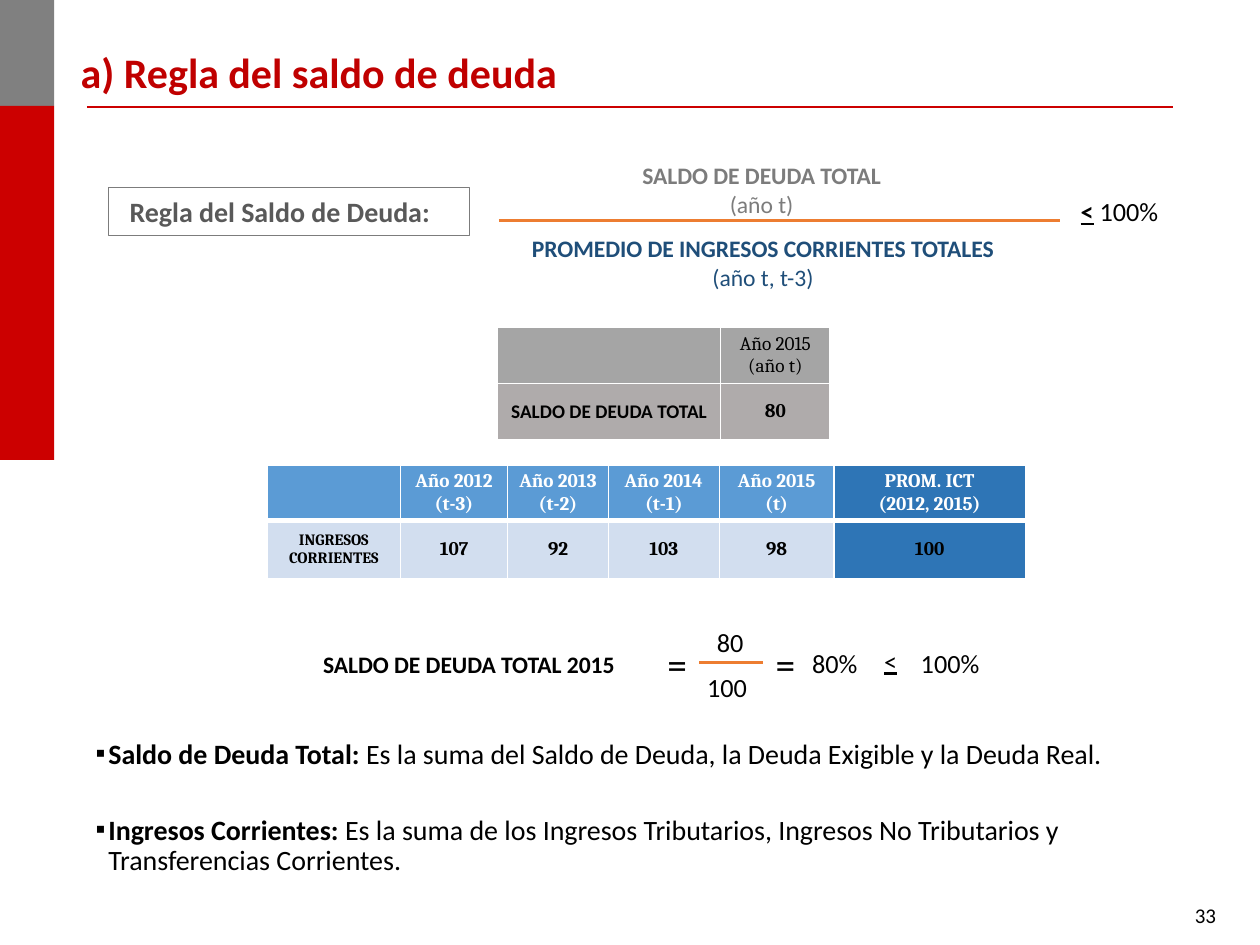
"""Build the slide that explains the debt balance rule."""
from dataclasses import dataclass
from typing import Optional

from lxml.etree import SubElement
from pptx import Presentation
from pptx.dml.color import RGBColor
from pptx.enum.shapes import MSO_CONNECTOR as Connector, MSO_SHAPE as Preset
from pptx.enum.text import MSO_ANCHOR as Anchor, MSO_AUTO_SIZE as AutoSize, PP_ALIGN as Align
from pptx.oxml.ns import qn
from pptx.util import Pt


@dataclass(frozen=True)
class Theme:
    sans: str = "Calibri"
    serif: str = "Cambria"
    black: str = "000000"
    white: str = "FFFFFF"
    red: str = "CC0000"
    title_red: str = "C00000"
    grey: str = "808080"
    soft_grey: str = "7C7C7C"
    dark_grey: str = "595959"
    navy: str = "1F4E79"
    orange: str = "ED7D31"
    debt_head: str = "A5A5A5"
    debt_row: str = "AFABAB"
    income_head: str = "5B9BD5"
    income_row: str = "D2DEEF"
    average: str = "2E75B6"
    title_size: float = 24
    equals_size: float = 22.5
    body_size: float = 16
    value_size: float = 15
    term_size: float = 13.5
    number_size: float = 12
    table_size: float = 11
    small_size: float = 9


THEME = Theme()


@dataclass(frozen=True)
class Span:
    text: str
    size: float = THEME.value_size
    color: str = THEME.black
    bold: bool = False
    underline: bool = False
    font: str = THEME.sans


@dataclass(frozen=True)
class Box:
    left: float
    top: float
    width: float
    height: float

    def lengths(self) -> list:
        return [Pt(value) for value in (self.left, self.top, self.width, self.height)]


@dataclass(frozen=True)
class Label:
    box: Box
    paras: list[list[Span]]
    align: Align = Align.CENTER


@dataclass(frozen=True)
class Rule:
    left: float
    right: float
    y: float
    color: str = THEME.orange
    weight: float = 1.5


@dataclass(frozen=True)
class Cell:
    fill: str
    lines: tuple[str, ...] = ()
    color: str = THEME.black
    bold: bool = True
    size: float = THEME.table_size
    font: str = THEME.serif


@dataclass(frozen=True)
class Grid:
    left: float
    top: float
    columns: list[float]
    rows: list[float]
    cells: list[list[Cell]]
    divider: float


def rgb(color: str) -> RGBColor:
    return RGBColor.from_string(color)


def write_para(para, spans: list[Span], align: Align) -> None:
    para.alignment = align
    for span in spans:
        run = para.add_run()
        run.text = span.text
        run.font.name = span.font
        run.font.size = Pt(span.size)
        run.font.bold = span.bold
        run.font.underline = span.underline
        run.font.color.rgb = rgb(span.color)


def write_frame(frame, paras: list[list[Span]], align: Align) -> None:
    frame.word_wrap = True
    for index, spans in enumerate(paras):
        para = frame.add_paragraph() if index else frame.paragraphs[0]
        write_para(para, spans, align)


def place(shape, box: Box) -> None:
    shape.left, shape.top, shape.width, shape.height = box.lengths()


def draw_label(page, label: Label) -> None:
    shape = page.shapes.add_textbox(*label.box.lengths())
    write_frame(shape.text_frame, label.paras, label.align)


def draw_rule(page, rule: Rule) -> None:
    line = page.shapes.add_connector(
        Connector.STRAIGHT, Pt(rule.left), Pt(rule.y), Pt(rule.right), Pt(rule.y))
    line.line.color.rgb = rgb(rule.color)
    line.line.width = Pt(rule.weight)
    SubElement(line._element.spPr, qn("a:effectLst"))


def draw_rectangle(page, box: Box, fill: Optional[str] = None, outline: Optional[str] = None):
    shape = page.shapes.add_shape(Preset.RECTANGLE, *box.lengths())
    shape.shadow.inherit = False
    if fill:
        shape.fill.solid()
        shape.fill.fore_color.rgb = rgb(fill)
    else:
        shape.fill.background()
    if outline:
        shape.line.color.rgb = rgb(outline)
        shape.line.width = Pt(0.75)
    else:
        shape.line.fill.background()
    return shape


def draw_border(cell, side: str, weight: float) -> None:
    edge = SubElement(cell._tc.get_or_add_tcPr(), qn(f"a:ln{side}"), w=str(Pt(weight)))
    SubElement(SubElement(edge, qn("a:solidFill")), qn("a:srgbClr"), val=THEME.white)


def draw_grid(page, grid: Grid) -> None:
    box = Box(grid.left, grid.top, sum(grid.columns), sum(grid.rows))
    table = page.shapes.add_table(len(grid.rows), len(grid.columns), *box.lengths()).table
    table.first_row = table.horz_banding = False
    for column, width in zip(table.columns, grid.columns):
        column.width = Pt(width)
    for row_index, (row, height) in enumerate(zip(table.rows, grid.rows)):
        row.height = Pt(height)
        for cell, data in zip(row.cells, grid.cells[row_index]):
            for side in "LRTB":
                inner = side == ("T" if row_index else "B")
                draw_border(cell, side, grid.divider if inner else 1)
            cell.fill.solid()
            cell.fill.fore_color.rgb = rgb(data.fill)
            cell.vertical_anchor = Anchor.MIDDLE
            cell.margin_left = cell.margin_right = Pt(5)
            cell.margin_top = cell.margin_bottom = Pt(3)
            paras = [[Span(line, data.size, data.color, data.bold, font=data.font)]
                     for line in data.lines]
            write_frame(cell.text_frame, paras, Align.CENTER)


def fill_title(page, text: str) -> None:
    title = page.shapes.title
    place(title, Box(38.9, 23, 637.9, 36))
    write_frame(title.text_frame, [[Span(text, THEME.title_size, THEME.title_red, True)]], Align.LEFT)
    title.text_frame.vertical_anchor = Anchor.MIDDLE
    title.text_frame.auto_size = AutoSize.NONE


def fill_definitions(page, definitions: list[tuple[str, str]]) -> None:
    body = page.placeholders[1]
    place(body, Box(54.7, 419.8, 636.5, 84.2))
    frame = body.text_frame
    frame.margin_left = frame.margin_right = 0
    frame.margin_top = frame.margin_bottom = Pt(3)
    frame.auto_size = AutoSize.NONE
    write_frame(frame, [[Span(term, THEME.body_size, bold=True), Span(meaning, THEME.body_size)]
                        for term, meaning in definitions], Align.LEFT)
    for index, para in enumerate(frame.paragraphs):
        para.line_spacing = 0.9
        para.space_before = Pt(24 if index else 2.2)
        para.space_after = Pt(2.2)
        props = para._p.get_or_add_pPr()
        props.set("marL", str(Pt(7.2)))
        props.set("indent", str(Pt(-7.2)))
        SubElement(props, qn("a:buChar"), char="▪")


def draw_rule_name(page, text: str) -> None:
    frame = draw_rectangle(page, Box(61.9, 107.3, 206.6, 27.4), outline=THEME.soft_grey).text_frame
    frame.margin_left, frame.margin_right = Pt(12.2), 0
    frame.vertical_anchor = Anchor.MIDDLE
    write_frame(frame, [[Span(text, THEME.body_size, THEME.dark_grey, True)]], Align.LEFT)


def term(text: str, detail: str, color: str) -> list[list[Span]]:
    return [[Span(text, THEME.term_size, color, True)], [Span(detail, THEME.term_size, color)]]


def main() -> None:
    deck = Presentation()
    deck.slide_width, deck.slide_height = Pt(720), Pt(540)
    page = deck.slides.add_slide(deck.slide_layouts[1])
    draw_rectangle(page, Box(0, 0, 31, 60.5), THEME.grey)
    draw_rectangle(page, Box(0, 60.5, 31, 202.3), THEME.red)
    fill_title(page, "a) Regla del saldo de deuda")
    for rule in (Rule(49.7, 670.3, 61.2, THEME.red, 1), Rule(285.1, 605.5, 126),
                 Rule(399.6, 436.3, 378.7)):
        draw_rule(page, rule)
    draw_rule_name(page, "Regla del Saldo de Deuda:")

    debt = [[Cell(THEME.debt_head), Cell(THEME.debt_head, ("Año 2015", "(año t)"), bold=False)],
            [Cell(THEME.debt_row, ("SALDO DE DEUDA TOTAL",), font=THEME.sans),
             Cell(THEME.debt_row, ("80",))]]
    draw_grid(page, Grid(284.4, 187.2, [127.4, 62.6], [32, 32], debt, 1))

    years = [("Año 2012", "(t-3)"), ("Año 2013", "(t-2)"), ("Año 2014", "(t-1)"), ("Año 2015", "(t)")]
    income = [[Cell(THEME.income_head),
               *(Cell(THEME.income_head, year, THEME.white) for year in years),
               Cell(THEME.average, ("PROM. ICT", "(2012, 2015)"), THEME.white)],
              [Cell(THEME.income_row, ("INGRESOS", "CORRIENTES"), size=THEME.small_size),
               *(Cell(THEME.income_row, (value,)) for value in ("107", "92", "103", "98")),
               Cell(THEME.average, ("100",))]]
    draw_grid(page, Grid(152.6, 265.7, [76.3, 61.2, 57.6, 63.4, 65.5, 109.4], [31.7, 33.1], income, 3))

    equals = [[Span("=", THEME.equals_size)]]
    for label in (
        Label(Box(293, 88.6, 284.4, 40.3), term("SALDO DE DEUDA TOTAL", "(año t)", THEME.soft_grey)),
        Label(Box(262.1, 130.3, 347.8, 40.3),
              term("PROMEDIO DE INGRESOS CORRIENTES TOTALES", "(año t, t-3)", THEME.navy)),
        Label(Box(602.6, 108, 74.2, 43.9), [[Span("<", bold=True, underline=True), Span(" 100%")]]),
        Label(Box(125.7, 367.9, 284.4, 23.8),
              [[Span("SALDO DE DEUDA TOTAL 2015", THEME.term_size, bold=True)]]),
        Label(Box(370.1, 362, 33.8, 34.6), equals),
        Label(Box(394.6, 354.2, 45.4, 25.2), [[Span("80")]]),
        Label(Box(392.4, 380.2, 46.1, 25.2), [[Span("100")]]),
        Label(Box(432, 362, 33.8, 34.6), equals),
        Label(Box(450, 366.5, 54, 25.2), [[Span("80%")]]),
        Label(Box(474.5, 365, 69.1, 25.2), [[Span("<", underline=True)]]),
        Label(Box(511.2, 366.5, 63.4, 25.2), [[Span("100%")]]),
        Label(Box(534.2, 512, 167.8, 28), [[Span("33", THEME.number_size)]], Align.RIGHT),
    ):
        draw_label(page, label)

    fill_definitions(page, [
        ("Saldo de Deuda Total:", " Es la suma del Saldo de Deuda, la Deuda Exigible y la Deuda Real."),
        ("Ingresos Corrientes: ", "Es la suma de los Ingresos Tributarios, Ingresos No Tributarios y "
                                  "Transferencias Corrientes."),
    ])
    deck.save("out.pptx")


if __name__ == "__main__":
    main()
